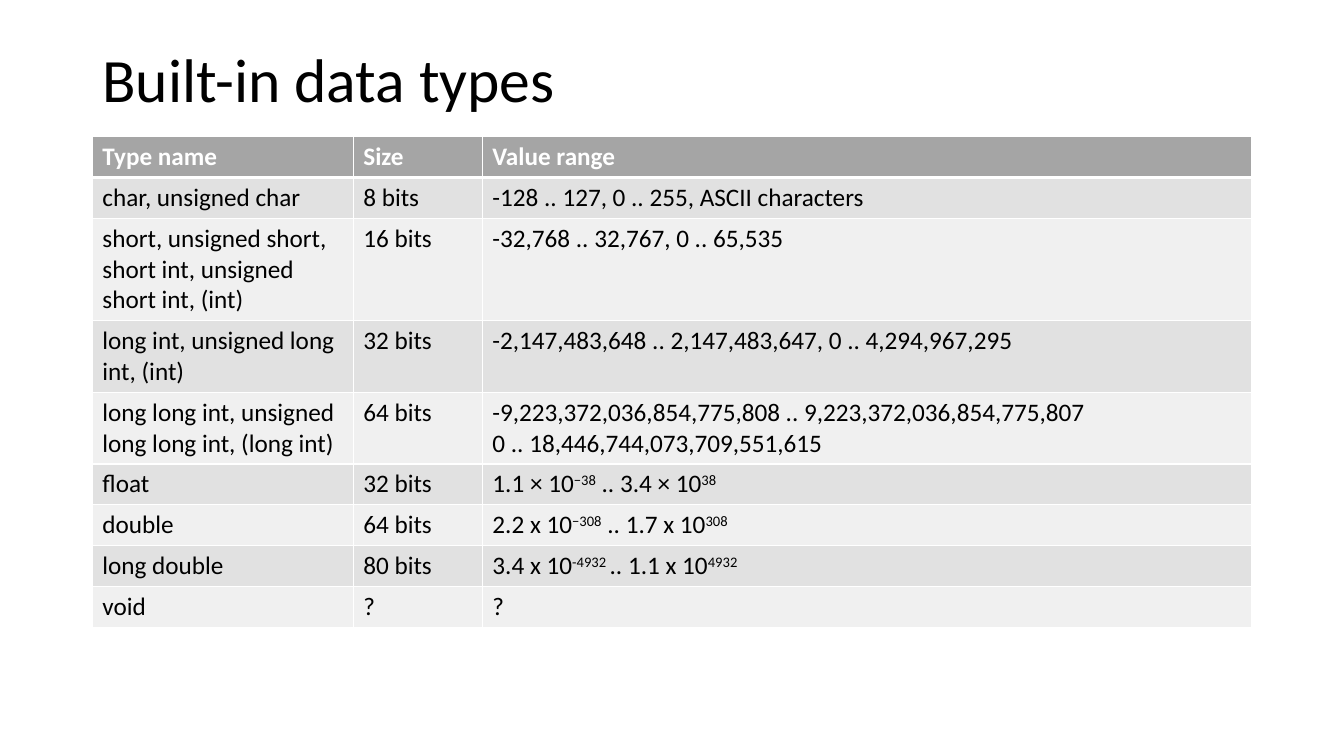
from lxml import etree
from pptx import Presentation
from pptx.dml.color import RGBColor
from pptx.enum.text import MSO_ANCHOR, MSO_AUTO_SIZE, PP_ALIGN
from pptx.oxml.ns import qn
from pptx.util import Pt

LEFT = PP_ALIGN.LEFT
MIDDLE = MSO_ANCHOR.MIDDLE
NO_FIT = MSO_AUTO_SIZE.NONE

# Content: a tuple alternates base text and exponent
TITLE = "Built-in data types"
ROWS = [
    ("Type name", "Size", "Value range"),
    ("char, unsigned char", "8 bits", "-128 .. 127, 0 .. 255, ASCII characters"),
    ("short, unsigned short,\nshort int, unsigned short int, (int)", "16 bits",
     "-32,768 .. 32,767, 0 .. 65,535"),
    ("long int, unsigned long int, (int)", "32 bits",
     "-2,147,483,648 .. 2,147,483,647, 0 .. 4,294,967,295"),
    ("long long int, unsigned long long int, (long int)", "64 bits",
     "-9,223,372,036,854,775,808 .. 9,223,372,036,854,775,807\v"
     "0 .. 18,446,744,073,709,551,615"),
    ("float", "32 bits", ("1.1 × 10", "−38", " .. 3.4 × 10", "38")),
    ("double", "64 bits", ("2.2 x 10", "−308", " .. 1.7 x 10", "308")),
    ("long double", "80 bits", ("3.4 x 10", "-4932 ", ".. 1.1 x 10", "4932")),
    ("void", "?", "?"),
]

# Look
FONT = "Calibri"
BLACK = RGBColor(0, 0, 0)
WHITE = RGBColor(255, 255, 255)
HEAD = RGBColor(0xA5, 0xA5, 0xA5)
BANDS = (RGBColor(0xF0, 0xF0, 0xF0), RGBColor(0xE1, 0xE1, 0xE1))
X, WIDTH = 66, 828
COLS = (186.4, 92.2, 549.4)
ROW_H = 29.2


def style(run, size, color, bold=False):
    font = run.font
    font.name, font.size, font.bold = FONT, Pt(size), bold
    font.color.rgb = color


def border(cell, side, width):
    props = cell._tc.get_or_add_tcPr()
    line = etree.SubElement(props, qn("a:ln" + side), w=str(Pt(width)))
    fill = etree.SubElement(line, qn("a:solidFill"))
    etree.SubElement(fill, qn("a:srgbClr"), val=str(WHITE))


def write(cell, value):
    if isinstance(value, str):
        cell.text_frame.text = value
        return
    para = cell.text_frame.paragraphs[0]
    for i, part in enumerate(value):
        run = para.add_run()
        run.text = part
        if i % 2:
            run.font._element.set("baseline", "30000")


deck = Presentation()
deck.slide_width, deck.slide_height = Pt(960), Pt(540)
slide = deck.slides.add_slide(deck.slide_layouts[5])

# Title
title = slide.shapes.title
title.left, title.top, title.width, title.height = Pt(X), Pt(28.8), Pt(WIDTH), Pt(60)
frame = title.text_frame
frame.text = TITLE
frame.auto_size = NO_FIT
frame.vertical_anchor = MIDDLE
para = frame.paragraphs[0]
para.alignment = LEFT
para.line_spacing = 0.9
style(para.runs[0], 44, BLACK)

# Table
table = slide.shapes.add_table(len(ROWS), len(COLS), Pt(X), Pt(97.5),
                               Pt(WIDTH), Pt(ROW_H * len(ROWS))).table
for col, width in zip(table.columns, COLS):
    col.width = Pt(width)
for r, values in enumerate(ROWS):
    table.rows[r].height = Pt(ROW_H)
    head = r == 0
    for c, value in enumerate(values):
        cell = table.cell(r, c)
        write(cell, value)
        for para in cell.text_frame.paragraphs:
            for run in para.runs:
                style(run, 18, WHITE if head else BLACK, head)
        # The rule under the header is thicker than the others
        for side, width in (("L", 1), ("R", 1), ("T", 3 if r == 1 else 1),
                            ("B", 3 if head else 1)):
            border(cell, side, width)
        cell.fill.solid()
        cell.fill.fore_color.rgb = HEAD if head else BANDS[r % 2]

deck.save("out.pptx")
